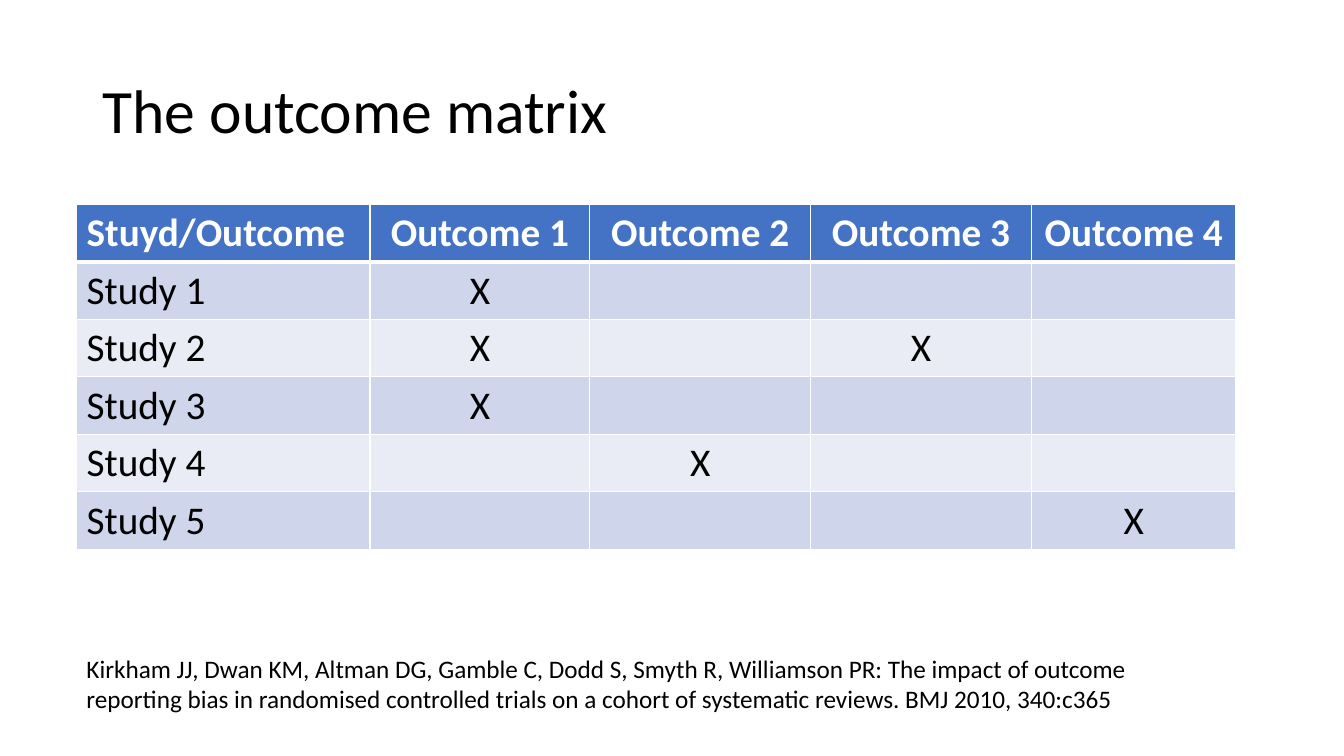
from lxml.etree import SubElement
from pptx import Presentation
from pptx.dml.color import RGBColor
from pptx.enum.text import MSO_ANCHOR, PP_ALIGN
from pptx.oxml.ns import qn
from pptx.util import Inches, Pt

LEFT, WIDTH = Inches(0.76), Inches(11.5)
COLUMN_WIDTHS = [2.91, 2.18, 2.19, 2.19, 2.03]
ROW_HEIGHT = Inches(0.57)
STUDIES = 5
OUTCOMES = 4
REPORTED = {(1, 1), (2, 1), (2, 3), (3, 1), (4, 2), (5, 4)}  # (study, outcome)


def style(paragraph, size, color="000000", bold=False):
    for run in paragraph.runs:
        run.font.name = "Calibri"
        run.font.size = Pt(size)
        run.font.bold = bold
        run.font.color.rgb = RGBColor.from_string(color)


def add_border(cell, side, points):
    line = SubElement(cell._tc.get_or_add_tcPr(), qn(f"a:ln{side}"), w=str(Pt(points)))
    fill = SubElement(line, qn("a:solidFill"))
    SubElement(fill, qn("a:srgbClr"), val="FFFFFF")


prs = Presentation()
prs.slide_width, prs.slide_height = Inches(13.33), Inches(7.5)
slide = prs.slides.add_slide(prs.slide_layouts[6])

# Title
title = slide.shapes.add_textbox(Inches(0.92), Inches(0.4), WIDTH, Inches(1.45)).text_frame
title.word_wrap = True
title.vertical_anchor = MSO_ANCHOR.MIDDLE
title.text = "The outcome matrix"
title.paragraphs[0].line_spacing = 0.9
style(title.paragraphs[0], 44)

# Matrix of studies against outcomes
matrix = slide.shapes.add_table(
    STUDIES + 1, OUTCOMES + 1, LEFT, Inches(2.03), WIDTH, ROW_HEIGHT * (STUDIES + 1)
).table
for column, width in zip(matrix.columns, COLUMN_WIDTHS):
    column.width = Inches(width)

for study, row in enumerate(matrix.rows):
    row.height = ROW_HEIGHT
    header = study == 0
    for outcome, cell in enumerate(row.cells):
        if header:
            cell.text = f"Outcome {outcome}" if outcome else "Stuyd/Outcome"
        elif outcome == 0:
            cell.text = f"Study {study}"
        elif (study, outcome) in REPORTED:
            cell.text = "X"
        paragraph = cell.text_frame.paragraphs[0]
        paragraph.alignment = PP_ALIGN.CENTER if outcome else PP_ALIGN.LEFT
        style(paragraph, 28, "FFFFFF" if header else "000000", bold=header)

        for side in "LRTB":
            thick = (header and side == "B") or (study == 1 and side == "T")
            add_border(cell, side, 3 if thick else 1)
        cell.fill.solid()
        band = "CFD5EA" if study % 2 else "E9EBF5"
        cell.fill.fore_color.rgb = RGBColor.from_string("4472C4" if header else band)

# Reference
reference = slide.shapes.add_textbox(LEFT, Inches(6.43), WIDTH, Inches(0.71)).text_frame
reference.word_wrap = True
reference.text = (
    "Kirkham JJ, Dwan KM, Altman DG, Gamble C, Dodd S, Smyth R, Williamson PR: "
    "The impact of outcome reporting bias in randomised controlled trials "
    "on a cohort of systematic reviews. BMJ 2010, 340:c365"
)
style(reference.paragraphs[0], 18)

prs.save("out.pptx")
